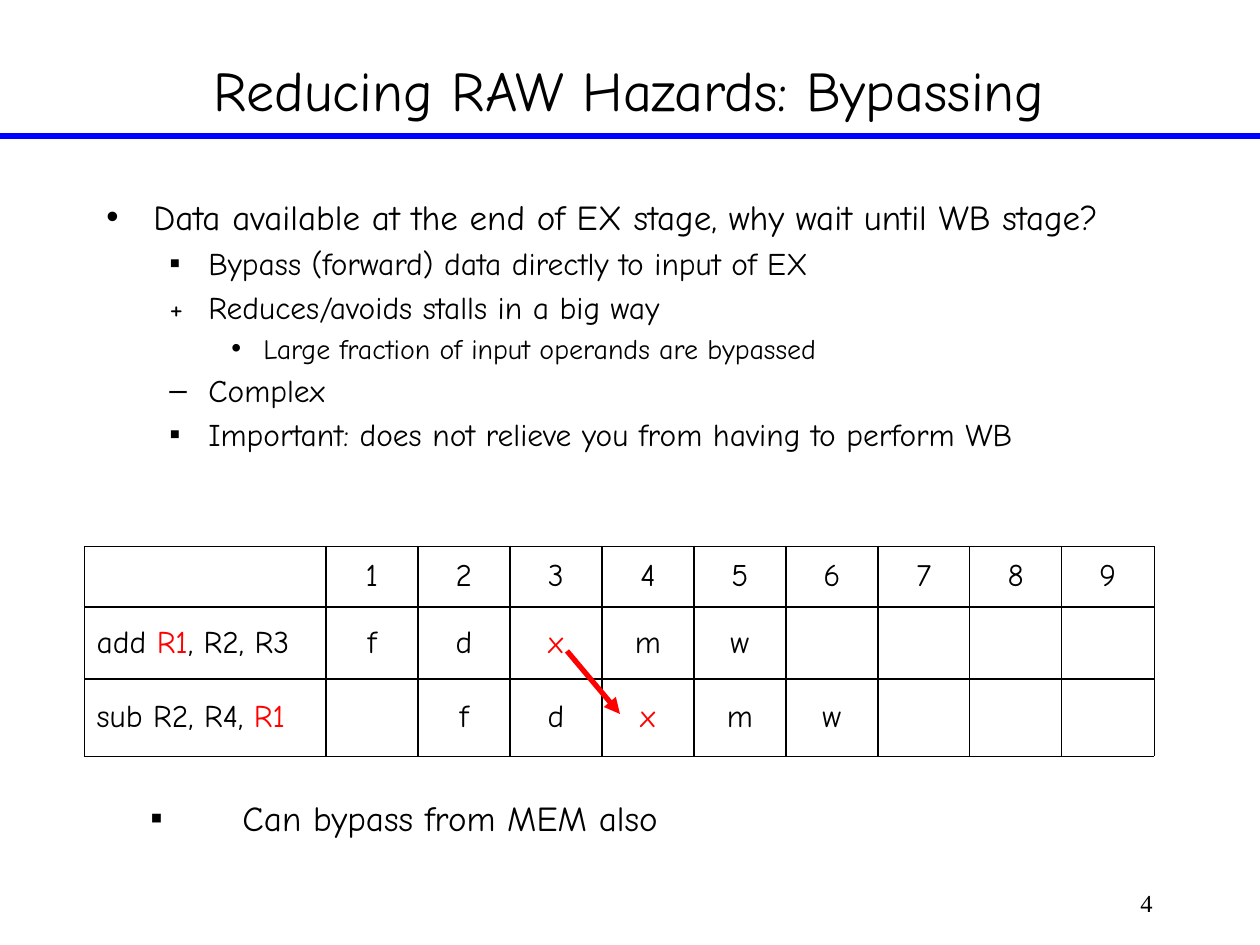
import pptx
import pptx.util
import pptx.dml.color
import pptx.enum.shapes
import pptx.enum.text
import pptx.oxml.ns
from lxml import etree

PX = 914400 / 126
FONT = "Comic Neue"
COLORS = {"text": "000000", "rule": "0000FF", "bypass": "FF0000"}
ALIGN = pptx.enum.text.PP_ALIGN
MIDDLE = pptx.enum.text.MSO_ANCHOR.MIDDLE


def px(length):
    return pptx.util.Emu(round(length * PX))


def rgb(name):
    return pptx.dml.color.RGBColor.from_string(COLORS[name])


def add_xml(parent, tag, **attributes):
    return etree.SubElement(parent, pptx.oxml.ns.qn(tag), attributes)


def write_text(paragraph, text, size=18, font=FONT, align=ALIGN.LEFT, color="text",
               before=0, bullet=None, left=0, indent=0):
    """Fill a paragraph; the parts between | marks take the bypass colour."""
    paragraph.alignment = align
    paragraph.space_before = pptx.util.Pt(before)
    for index, part in enumerate(text.split("|")):
        if not part:
            continue
        run = paragraph.add_run()
        run.text = part
        run.font.size = pptx.util.Pt(size)
        run.font.name = font
        run.font.color.rgb = rgb("bypass" if index % 2 else color)
    properties = paragraph._p.get_or_add_pPr()
    properties.set("marL", str(px(left)))
    properties.set("indent", str(px(indent)))
    if bullet:
        add_xml(properties, "a:buFont", typeface="Arial")
        add_xml(properties, "a:buChar", char=bullet)
    else:
        add_xml(properties, "a:buNone")


def add_text_box(slide, box):
    frame = slide.shapes.add_textbox(*map(px, box)).text_frame
    frame.word_wrap = True
    return frame


def add_line(slide, start, end, color, arrow=False):
    line = slide.shapes.add_connector(
        pptx.enum.shapes.MSO_CONNECTOR.STRAIGHT, *map(px, start + end))
    line.line.color.rgb = rgb(color)
    line.line.width = pptx.util.Pt(3)
    if arrow:
        add_xml(line.line._get_or_add_ln(), "a:tailEnd", type="triangle")
    add_xml(line._element.spPr, "a:effectLst")


def add_title(slide, box, text):
    title = slide.shapes.title
    title.left, title.top, title.width, title.height = map(px, box)
    title.text_frame.vertical_anchor = MIDDLE
    write_text(title.text_frame.paragraphs[0], text, size=32, align=ALIGN.CENTER)


def add_outline(slide, box, items):
    # Size, left margin and hanging indent of each level
    levels = [(20, 47, -47), (18, 102, -39), (16, 157, -32)]
    frame = add_text_box(slide, box)
    for index, (level, bullet, text) in enumerate(items):
        paragraph = frame.add_paragraph() if index else frame.paragraphs[0]
        size, left, indent = levels[level]
        paragraph.level = level
        write_text(paragraph, text, size=size, before=size * 0.2,
                   bullet=bullet, left=left, indent=indent)


def set_borders(cell, widths):
    properties = cell._tc.get_or_add_tcPr()
    for index, (side, width) in enumerate(zip("LRTB", widths)):
        line = add_xml(properties, f"a:ln{side}", w=str(pptx.util.Pt(width)))
        fill = add_xml(line, "a:solidFill")
        add_xml(fill, "a:srgbClr", val=COLORS["text"])
        properties.insert(index, line)


def add_pipeline(slide, box, column_widths, row_heights, rows):
    last_row, last_column = len(row_heights) - 1, len(column_widths) - 1
    table = slide.shapes.add_table(last_row + 1, last_column + 1, *map(px, box)).table
    table.first_row = table.horz_banding = False
    for column, width in zip(table.columns, column_widths):
        column.width = px(width)
    for row, height in zip(table.rows, row_heights):
        row.height = px(height)
    for r, texts in enumerate(rows):
        for c, text in enumerate(texts):
            cell = table.cell(r, c)
            cell.vertical_anchor = MIDDLE
            cell.fill.background()
            write_text(cell.text_frame.paragraphs[0], text, before=3.6,
                       align=ALIGN.CENTER if c else ALIGN.LEFT)
            # Thin outer frame, heavier inner grid
            outer = (c == 0, c == last_column, r == 0, r == last_row)
            set_borders(cell, [0.25 if edge else 1 for edge in outer])


def main():
    presentation = pptx.Presentation()
    presentation.slide_width, presentation.slide_height = px(1260), px(945)
    slide = presentation.slides.add_slide(presentation.slide_layouts[5])

    # Heading and rule
    add_line(slide, (0, 136), (1260, 136), "rule")
    add_title(slide, (94, 21, 1071, 136), "Reducing RAW Hazards: Bypassing")

    # Argument
    add_outline(slide, (94, 189, 1071, 336), [
        (0, "•", "Data available at the end of EX stage, why wait until WB stage?"),
        (1, "▪", "Bypass (forward) data directly to input of EX"),
        (1, None, "+\tReduces/avoids stalls in a big way"),
        (2, "•", "Large fraction of input operands are bypassed"),
        (1, "–", "Complex"),
        (1, "▪", "Important: does not relieve you from having to perform WB"),
    ])

    # Pipeline diagram, one column per cycle
    cycles = 9
    add_pipeline(slide, (84, 546, 1070, 210), [242] + [92] * cycles, [61, 72, 77], [
        [""] + [str(cycle + 1) for cycle in range(cycles)],
        ["add |R1|, R2, R3", "f", "d", "|x|", "m", "w"] + [""] * 4,
        ["sub R2, R4, |R1|", "", "f", "d", "|x|", "m", "w"] + [""] * 3,
    ])
    add_line(slide, (567, 651), (620, 714), "bypass", arrow=True)

    # Closing remark
    remark = add_text_box(slide, (105, 790, 672, 54))
    write_text(remark.paragraphs[0], "Can bypass from MEM also", size=20,
               bullet="▪", left=125, indent=-92)

    # Slide number
    number = add_text_box(slide, (903, 882, 262, 63))
    write_text(number.paragraphs[0], "4", size=14, font="Times New Roman", align=ALIGN.RIGHT)

    presentation.save("out.pptx")


if __name__ == "__main__":
    main()
